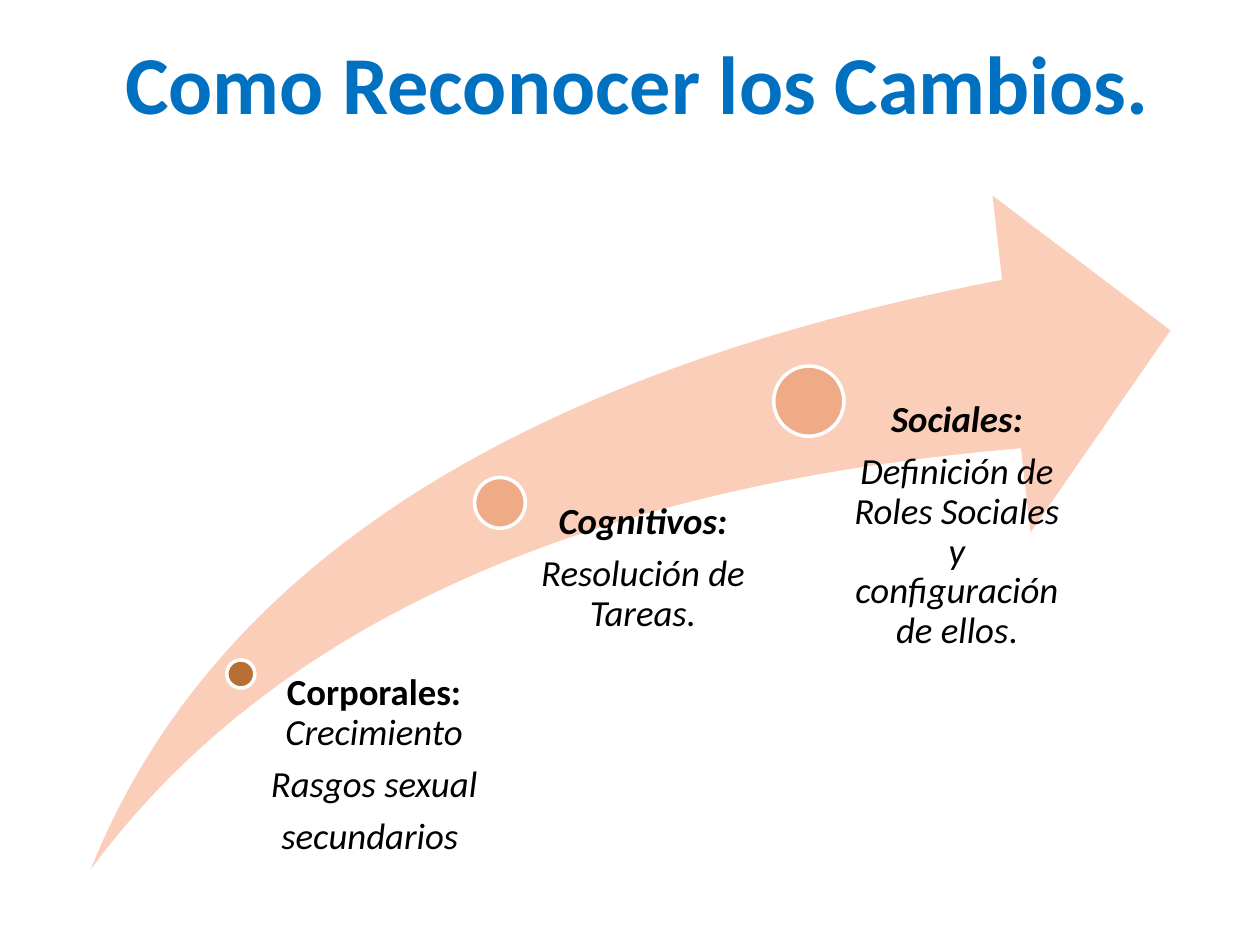
from pptx import Presentation, util as u
from pptx.dml.color import RGBColor
from pptx.enum import shapes as sh, text as tx

BLUE = RGBColor(0x00, 0x70, 0xC0)
PEACH = RGBColor(0xFB, 0xCE, 0xB9)
BROWN = RGBColor(0xB7, 0x6F, 0x34)
SALMON = RGBColor(0xEF, 0xAB, 0x85)
WHITE = RGBColor(0xFF, 0xFF, 0xFF)
BLACK = RGBColor(0, 0, 0)
FONT = "Calibri"

BOLD, ITAL, BOTH, PLAIN = (True, False), (False, True), (True, True), (False, False)

STEPS = [
    (0.139, 0.71, 0.026, 0.233, BROWN, [
        [("Corporales: ", BOLD), ("Crecimiento", ITAL)],
        [("Rasgos sexual", ITAL)],
        [("secundarios ", ITAL)]]),
    (0.379, 0.456, 0.047, 0.24, SALMON, [
        [("Cognitivos:", BOTH)],
        [("Resolución de Tareas.", ITAL)]]),
    (0.665, 0.305, 0.065, 0.24, SALMON, [
        [("Sociales:", BOTH)],
        [("Definición de Roles Sociales y configuración de ellos", ITAL),
         (".", PLAIN)]]),
]


def share(deck, left, top, width, height):
    wide, high = deck.slide_width, deck.slide_height
    return int(left * wide), int(top * high), int(width * wide), int(height * high)


def style(run, size, color, bold, ital=False):
    font = run.font
    font.name, font.size = FONT, u.Pt(size)
    font.bold, font.italic = bold, ital
    font.color.rgb = color


def draw_title(slide, box):
    title = slide.shapes.title
    title.left, title.top, title.width, title.height = box
    frame = title.text_frame
    frame.text = "Como Reconocer los Cambios. "
    frame.auto_size = tx.MSO_AUTO_SIZE.NONE
    frame.vertical_anchor = tx.MSO_ANCHOR.TOP
    para = frame.paragraphs[0]
    para.alignment = tx.PP_ALIGN.CENTER
    style(para.runs[0], 47, BLUE, True)


def draw_shape(slide, kind, box, fill):
    shape = slide.shapes.add_shape(kind, *box)
    shape.shadow.inherit = False
    shape.fill.solid()
    shape.fill.fore_color.rgb = fill
    shape.line.fill.background()
    return shape


def draw_label(slide, box, inset, paras):
    frame = slide.shapes.add_textbox(*box).text_frame
    frame.word_wrap = True
    frame.margin_left = inset
    frame.margin_top = frame.margin_right = frame.margin_bottom = 0
    for i, parts in enumerate(paras):
        para = frame.add_paragraph() if i else frame.paragraphs[0]
        para.alignment = tx.PP_ALIGN.CENTER
        para.line_spacing = 0.9
        para.space_after = u.Pt(7)
        for words, (bold, ital) in parts:
            run = para.add_run()
            run.text = words
            style(run, 21, BLACK, bold, ital)


def draw_path(slide, box):
    left, top, width, height = box
    arrow = draw_shape(slide, sh.MSO_SHAPE.SWOOSH_ARROW, box, PEACH)
    arrow.adjustments[0] = arrow.adjustments[1] = 0.25
    for col, row, dot, span, fill, paras in STEPS:
        x, y = left + int(col * width), top + int(row * height)
        size = int(dot * width)
        ball = draw_shape(slide, sh.MSO_SHAPE.OVAL,
                          (x - size // 2, y - size // 2, size, size), fill)
        ball.line.color.rgb = WHITE
        ball.line.width = u.Pt(2)
        draw_label(slide, (x, y, int(span * width), top + height - y),
                   int(0.53 * size), paras)


def main():
    deck = Presentation()
    deck.slide_width, deck.slide_height = u.Inches(10), u.Inches(7.5)
    slide = deck.slides.add_slide(deck.slide_layouts[5])
    draw_path(slide, share(deck, 0.072, 0.207, 0.857, 0.713))
    draw_title(slide, share(deck, 0.027, 0.028, 0.973, 0.119))
    deck.save("out.pptx")


if __name__ == "__main__":
    main()
